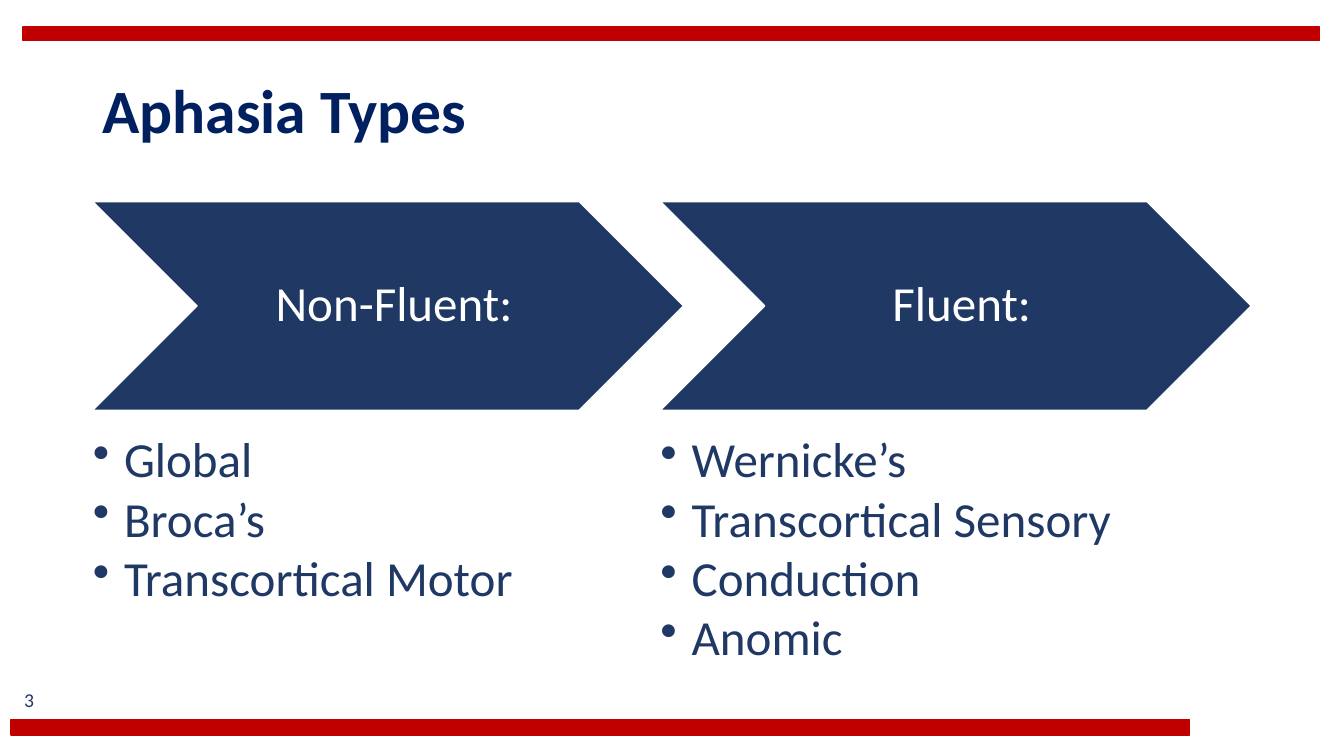
from lxml import etree
from pptx import Presentation
from pptx.dml.color import RGBColor
from pptx.enum.shapes import MSO_SHAPE
from pptx.enum.text import MSO_ANCHOR, PP_ALIGN
from pptx.oxml.ns import qn
from pptx.util import Pt

RECTANGLE, CHEVRON = MSO_SHAPE.RECTANGLE, MSO_SHAPE.CHEVRON
TOP, MIDDLE = MSO_ANCHOR.TOP, MSO_ANCHOR.MIDDLE
LEFT, CENTER = PP_ALIGN.LEFT, PP_ALIGN.CENTER

RED = RGBColor(0xC0, 0x00, 0x00)
NAVY = RGBColor(0x00, 0x20, 0x60)
BLUE = RGBColor(0x20, 0x38, 0x64)
WHITE = RGBColor(0xFF, 0xFF, 0xFF)

PX = 9144  # EMU per px, 100 px to the inch
APHASIA_TYPES = [
    ("Non-Fluent:", ["Global", "Broca’s", "Transcortical Motor"]),
    ("Fluent:", ["Wernicke’s", "Transcortical Sensory", "Conduction", "Anomic"]),
]


class SlideBuilder:
    font_name = "Calibri"
    bullet_indent = 31

    def __init__(self, slide):
        self.slide = slide

    def shape(self, kind, box, fill, line):
        shape = self.slide.shapes.add_shape(kind, *(n * PX for n in box))
        shape.shadow.inherit = False
        shape.fill.solid()
        shape.fill.fore_color.rgb = fill
        shape.line.color.rgb = line
        shape.line.width = Pt(1)

    def text(self, box, lines, size, color, bold=False, align=LEFT, anchor=TOP,
             insets=(10, 5, 10, 5), spacing=0.9, after=0, bullets=False):
        frame = self.slide.shapes.add_textbox(*(n * PX for n in box)).text_frame
        frame.word_wrap = True
        frame.vertical_anchor = anchor
        (frame.margin_left, frame.margin_top,
         frame.margin_right, frame.margin_bottom) = (n * PX for n in insets)
        frame.text = "\n".join(lines)
        for paragraph in frame.paragraphs:
            paragraph.alignment = align
            paragraph.line_spacing = spacing
            paragraph.space_after = Pt(after)
            if bullets:
                self.bullet(paragraph)
            font = paragraph.font
            font.name, font.size, font.bold = self.font_name, Pt(size), bold
            font.color.rgb = color

    def bullet(self, paragraph):
        properties = paragraph._p.get_or_add_pPr()
        properties.set("marL", str(self.bullet_indent * PX))
        properties.set("indent", str(-self.bullet_indent * PX))
        etree.SubElement(properties, qn("a:buChar")).set("char", "•")


def main():
    presentation = Presentation()
    presentation.slide_width, presentation.slide_height = 1333 * PX, 750 * PX
    builder = SlideBuilder(
        presentation.slides.add_slide(presentation.slide_layouts[6]))

    # Red bars
    builder.shape(RECTANGLE, (11, 714, 1169, 15), RED, RED)
    builder.shape(RECTANGLE, (23, 27, 1286, 13), RED, RED)

    # Title
    builder.text((92, 40, 1150, 145), ["Aphasia Types"], 44, NAVY,
                 bold=True, anchor=MIDDLE)

    # One chevron and list per aphasia type
    for column, (heading, types) in enumerate(APHASIA_TYPES):
        left = 92 + 563 * column
        builder.shape(CHEVRON, (left, 200, 586, 207), BLUE, WHITE)
        builder.text((left + 104, 200, 380, 207), [heading], 35, WHITE,
                     align=CENTER, anchor=MIDDLE, insets=(15, 5, 5, 5))
        builder.text((left, 432, 469, 243), types, 35, BLUE,
                     insets=(0, 0, 0, 0), after=4.5, bullets=True)

    # Slide number
    builder.text((-14, 678, 86, 34), ["3"], 14, BLUE, align=CENTER, spacing=1.0)

    presentation.save("out.pptx")


if __name__ == "__main__":
    main()
